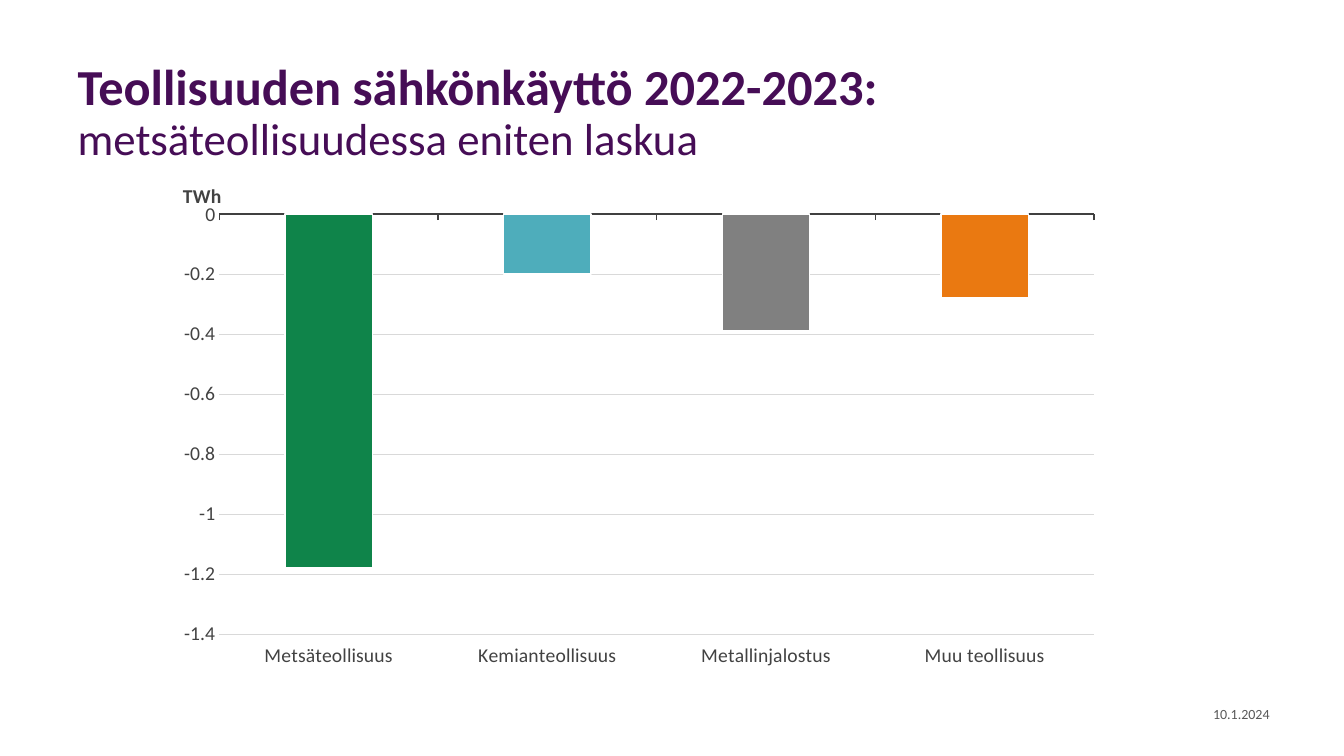
import pptx
import pptx.util
import pptx.dml.color
import pptx.chart.data
import pptx.enum.chart
import pptx.enum.text
import pptx.oxml
import pptx.oxml.ns
from dataclasses import dataclass

PX = 9144


@dataclass(frozen=True)
class Theme:
    """Hold the colours, font and type sizes."""
    font: str = "Calibri"
    title: str = "460D56"
    date: str = "595959"
    label: str = "424242"
    axis: str = "404040"
    grid: str = "D9D9D9"
    edge: str = "FFFFFF"
    bars: tuple = ("0F844A", "4EADBB", "808080", "EA7911")
    head: int = 36
    sub: int = 32
    tick: int = 14
    small: int = 10


THEME = Theme()
SALES = {
    "Metsäteollisuus": -1.18,
    "Kemianteollisuus": -0.2,
    "Metallinjalostus": -0.39,
    "Muu teollisuus": -0.28,
}


def rgb(code):
    """Turn a hex code into a colour."""
    return pptx.dml.color.RGBColor.from_string(code)


def style(font, size, color, bold=False):
    """Format a font."""
    font.name = THEME.font
    font.size = pptx.util.Pt(size)
    font.bold = bold
    font.color.rgb = rgb(color)


def write(para, text, **form):
    """Add a formatted run to a paragraph."""
    run = para.add_run()
    run.text = text
    style(run.font, **form)


def stroke(line, color, width):
    """Format a line."""
    line.color.rgb = rgb(color)
    line.width = pptx.util.Pt(width)


def place(shape, box):
    """Move a shape to a box in px."""
    shape.left, shape.top, shape.width, shape.height = (n * PX for n in box)


def pin(node, index, target=None, **spots):
    """Give a chart part a fixed layout."""
    for old in node.findall(pptx.oxml.ns.qn("c:layout")):
        node.remove(old)
    inner = f'<c:layoutTarget val="{target}"/>' if target else ""
    inner += "".join(f'<c:{key}Mode val="edge"/>' for key in "xy")
    inner += "".join(f'<c:{key} val="{val}"/>' for key, val in spots.items())
    space = pptx.oxml.ns.nsdecls("c")
    node.insert(index, pptx.oxml.parse_xml(
        f"<c:layout {space}><c:manualLayout>{inner}</c:manualLayout></c:layout>"))


def head(slide, box):
    """Fill the title."""
    shape = slide.shapes.title
    place(shape, box)
    frame = shape.text_frame
    frame.word_wrap = True
    frame.auto_size = pptx.enum.text.MSO_AUTO_SIZE.NONE
    frame.vertical_anchor = pptx.enum.text.MSO_ANCHOR.MIDDLE
    para = frame.paragraphs[0]
    para.alignment = pptx.enum.text.PP_ALIGN.LEFT
    para.line_spacing = 0.9
    write(para, "Teollisuuden sähkönkäyttö 2022-2023: ",
          size=THEME.head, color=THEME.title, bold=True)
    write(para, "metsäteollisuudessa eniten laskua",
          size=THEME.sub, color=THEME.title)


def date(slide, box):
    """Add the date."""
    frame = slide.shapes.add_textbox(*(n * PX for n in box)).text_frame
    frame.word_wrap = True
    frame.vertical_anchor = pptx.enum.text.MSO_ANCHOR.MIDDLE
    para = frame.paragraphs[0]
    para.alignment = pptx.enum.text.PP_ALIGN.RIGHT
    write(para, "10.1.2024", size=THEME.small, color=THEME.date)


def scale(axis):
    """Format the value axis and its unit."""
    axis.minimum_scale, axis.maximum_scale, axis.major_unit = -1.4, 0, 0.2
    axis.major_tick_mark = pptx.enum.chart.XL_TICK_MARK.NONE
    axis.tick_labels.number_format = "General"
    axis.tick_labels.number_format_is_linked = False
    axis.format.line.fill.background()
    stroke(axis.major_gridlines.format.line, THEME.grid, 0.5)
    frame = axis.axis_title.text_frame
    write(frame.paragraphs[0], "TWh",
          size=THEME.tick, color=THEME.label, bold=True)
    body = frame.paragraphs[0]._p.getparent().find(pptx.oxml.ns.qn("a:bodyPr"))
    body.set("rot", "0")
    body.set("vert", "horz")
    pin(axis.axis_title._element, 1, x=0.02, y=0.02)


def chart(slide, box):
    """Add the column chart."""
    data = pptx.chart.data.CategoryChartData()
    data.categories = list(SALES)
    data.add_series("TWh", list(SALES.values()))
    kind = pptx.enum.chart.XL_CHART_TYPE.COLUMN_CLUSTERED
    graph = slide.shapes.add_chart(kind, *(n * PX for n in box), data).chart
    style(graph.font, THEME.small, THEME.label)
    graph.has_legend = False
    graph.has_title = False
    plot = graph.plots[0]
    plot.gap_width = 150
    plot.vary_by_categories = False
    bars = plot.series[0]
    bars.invert_if_negative = False
    for index, color in enumerate(THEME.bars):
        form = bars.points[index].format
        form.fill.solid()
        form.fill.fore_color.rgb = rgb(color)
        stroke(form.line, THEME.edge, 1)
    for axis in (graph.category_axis, graph.value_axis):
        style(axis.tick_labels.font, THEME.tick, THEME.label)
    base = graph.category_axis
    base.tick_label_position = pptx.enum.chart.XL_TICK_LABEL_POSITION.LOW
    base.major_tick_mark = pptx.enum.chart.XL_TICK_MARK.OUTSIDE
    stroke(base.format.line, THEME.axis, 1)
    scale(graph.value_axis)
    area = graph._chartSpace.chart.plotArea
    pin(area, 0, "inner", x=0.062, y=0.091, w=0.918, h=0.833)


def main():
    """Build and save the slide."""
    deck = pptx.Presentation()
    deck.slide_width, deck.slide_height = 1333 * PX, 750 * PX
    slide = deck.slides.add_slide(deck.slide_layouts[5])
    head(slide, (67, 40, 1037, 145))
    date(slide, (1158, 695, 111, 27))
    chart(slide, (159, 167, 945, 500))
    deck.save("out.pptx")


if __name__ == "__main__":
    main()
